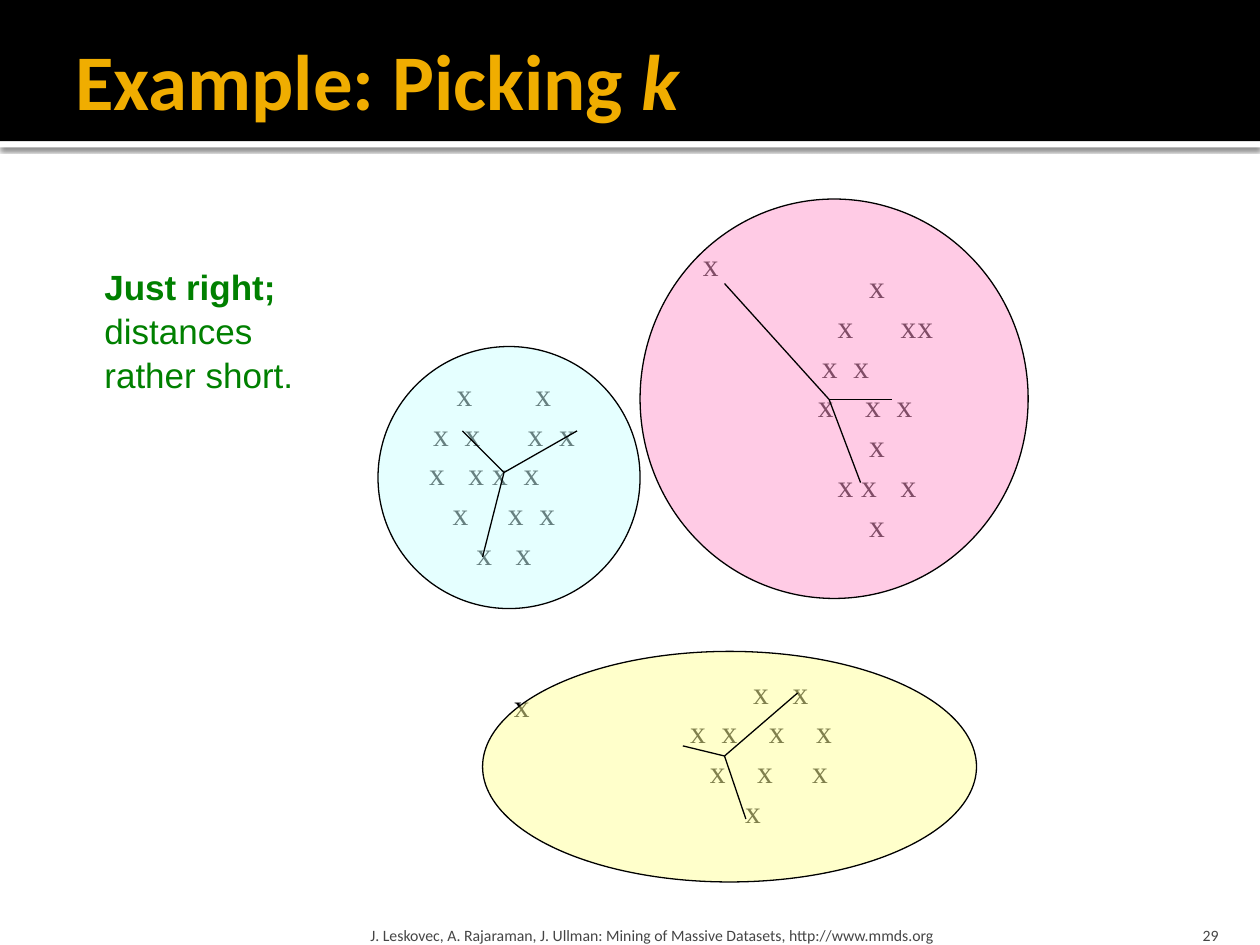
from math import sqrt

from lxml.etree import SubElement
from pptx import Presentation
from pptx.dml.color import RGBColor
from pptx.enum.shapes import MSO_CONNECTOR, MSO_SHAPE
from pptx.enum.text import MSO_ANCHOR, PP_ALIGN
from pptx.oxml.ns import qn
from pptx.util import Inches, Pt

COLORS = {
    "band": "000000", "rule": "FFFFFF", "title": "F0AD00", "footer": "454545",
    "ink": "000000", "note": "008000",
    "yellow": "FFFF99", "cyan": "CCFFFF", "pink": "FF99CC",
}
MARK_UNIT = 0.0625
MARK = {"size": 18, "font": "Times New Roman", "color": "ink", "spacing": 1.05}

CLUSTERS = [
    {"color": "yellow", "outline": (3.83, 5.17, 3.92, 1.83), "marks": (5, 5.08, 2.08, 1.75),
     "rows": [(-1, 4), (-9, -5, 1, 7), (-6.5, -0.5, 6.5), (-2,)],
     "outlier": (3.98, 5.38, 0.37, 0.5),
     "center": (5.75, 6), "ends": [(5.42, 5.92), (6.33, 5.5), (5.92, 6.5)]},
    {"color": "cyan", "outline": (3, 2.75, 2.08, 2.08), "marks": (3, 2.5, 2, 2.5),
     "rows": [(-6, 4), (-9, -5, 3, 7), (-9.5, -4.5, -1.5, 2.5), (-6.5, 0.5, 4.5), (-3.5, 1.5)],
     "outlier": None,
     "center": (4, 3.75), "ends": [(3.67, 3.42), (4.58, 3.42), (3.83, 4.42)]},
    {"color": "pink", "outline": (5.08, 1.58, 3.08, 3.17), "marks": (6, 1.67, 1.92, 3.08),
     "rows": [(-1,), (-5, -3, 3), (-7, -3), (-7.5, -1.5, 2.5), (-1,), (-5, -2, 3), (-1,)],
     "outlier": (5.48, 1.88, 0.37, 0.5),
     "center": (6.58, 3.17), "ends": [(5.75, 2.25), (7.08, 3.17), (6.83, 3.83)]},
]


def rgb(name):
    """Return the named colour."""
    return RGBColor.from_string(COLORS[name])


def inches(box):
    """Convert a tuple of inches to lengths."""
    return [Inches(v) for v in box]


def add_run(p, text, size=18, font="Calibri", color="ink", bold=False, italic=False,
            align=PP_ALIGN.LEFT, spacing=None):
    """Append a formatted run to a paragraph."""
    p.alignment = align
    p.line_spacing = spacing
    r = p.add_run()
    r.text = text
    r.font.size, r.font.name = Pt(size), font
    r.font.bold, r.font.italic = bold, italic
    r.font.color.rgb = rgb(color)


def set_frame(tf, anchor=MSO_ANCHOR.TOP, insets=(0.1, 0.05, 0.1, 0.05), wrap=True):
    """Set the anchor, insets and wrapping of a text frame."""
    tf.vertical_anchor, tf.word_wrap = anchor, wrap
    tf.margin_left, tf.margin_top, tf.margin_right, tf.margin_bottom = inches(insets)


def add_textbox(shapes, box, lines, anchor=MSO_ANCHOR.TOP,
                insets=(0.1, 0.05, 0.1, 0.05), wrap=True, **fmt):
    """Add a text box with one paragraph per (text, bold) line."""
    tf = shapes.add_textbox(*inches(box)).text_frame
    set_frame(tf, anchor, insets, wrap)
    for i, (text, bold) in enumerate(lines):
        p = tf.add_paragraph() if i else tf.paragraphs[0]
        add_run(p, text, bold=bold, **fmt)


def add_shape(s, kind, box, fill=None, line=None, alpha=None):
    """Add a preset shape with optional fill, outline and opacity."""
    sp = s.shapes.add_shape(kind, *inches(box))
    sp.shadow.inherit = False
    if fill:
        sp.fill.solid()
        sp.fill.fore_color.rgb = rgb(fill)
    else:
        sp.fill.background()
    if alpha:
        clr = sp._element.spPr.find(qn("a:solidFill"))[0]
        SubElement(clr, qn("a:alpha"), val=str(alpha * 1000))
    if line:
        sp.line.color.rgb, sp.line.width = rgb(line), Pt(0.75)
    else:
        sp.line.fill.background()
    return sp


def add_header(s, box):
    """Place the black band, its shadowed rule and the title."""
    x, y, w, h = box
    rule = add_shape(s, MSO_SHAPE.RECTANGLE, (x, y + h, w, 0.05), "rule")
    shadow = SubElement(rule._element.spPr.find(qn("a:effectLst")), qn("a:outerShdw"),
                        blurRad=str(Pt(2.5)), dist=str(Pt(0.8)), dir="5400000", rotWithShape="0")
    clr = SubElement(shadow, qn("a:srgbClr"), val=COLORS["band"])
    SubElement(clr, qn("a:alpha"), val="60000")
    band = add_shape(s, MSO_SHAPE.RECTANGLE, box, "band")
    for sp in (band, rule):
        s.shapes._spTree.insert(2, sp._element)
    title = s.shapes.title
    title.left, title.top, title.width, title.height = inches((x + 0.5, y + 0.17, w - 1, 0.92))
    tf = title.text_frame
    set_frame(tf, MSO_ANCHOR.MIDDLE, (0.1, 0.05, 0.05, 0.05))
    for text, italic in (("Example: Picking ", False), ("k", True)):
        add_run(tf.paragraphs[0], text, size=45, color="title", bold=True, italic=italic)


def add_marks(s, box, rows):
    """Place rows of marks at tab stops counted from the middle of the box."""
    tf = add_shape(s, MSO_SHAPE.OVAL, box).text_frame
    set_frame(tf, MSO_ANCHOR.MIDDLE, (0, 0, 0, 0))
    middle = box[2] / sqrt(2) / 2
    for i, row in enumerate(rows):
        p = tf.add_paragraph() if i else tf.paragraphs[0]
        add_run(p, "\tx" * len(row), **MARK)
        tabs = SubElement(p._p.get_or_add_pPr(), qn("a:tabLst"))
        for column in row:
            SubElement(tabs, qn("a:tab"), pos=str(Inches(middle + column * MARK_UNIT)), algn="l")


def add_spokes(s, center, ends):
    """Draw a group of lines from the centroid to sample points."""
    group = s.shapes.add_group_shape()
    for end in ends:
        c = group.shapes.add_connector(MSO_CONNECTOR.STRAIGHT, *inches(center + end))
        c.line.color.rgb, c.line.width = rgb("ink"), Pt(0.75)
        SubElement(c._element.spPr, qn("a:effectLst"))


def add_cluster(s, color, outline, marks, rows, outlier, center, ends):
    """Place one cluster: its marks, translucent outline and spokes."""
    add_marks(s, marks, rows)
    if outlier:
        add_textbox(s.shapes, outlier, [("x", False)], wrap=False, **MARK)
    add_shape(s, MSO_SHAPE.OVAL, outline, color, line="ink", alpha=50)
    add_spokes(s, center, ends)


def add_footer(s, box):
    """Place the credit line and the page number."""
    x, y, w, h = box
    fmt = {"size": 9, "color": "footer", "anchor": MSO_ANCHOR.BOTTOM}
    credit = "J. Leskovec, A. Rajaraman, J. Ullman: Mining of Massive Datasets, http://www.mmds.org"
    add_textbox(s.shapes, (x, y, 6.02, h), [(credit, False)], insets=(0.05, 0.05, 0.05, 0), **fmt)
    add_textbox(s.shapes, (x + w - 0.8, y, 0.8, h), [("29", False)],
                insets=(0.1, 0.05, 0.1, 0), align=PP_ALIGN.RIGHT, **fmt)


def main():
    """Build and save the slide."""
    prs = Presentation()
    prs.slide_width, prs.slide_height = Inches(10), Inches(7.5)
    s = prs.slides.add_slide(prs.slide_layouts[5])
    add_header(s, (0, 0, 10, 1.12))
    add_footer(s, (2.89, 7.2, 6.88, 0.3))
    for cluster in CLUSTERS:
        add_cluster(s, **cluster)
    note = [("Just right;", True), ("distances", False), ("rather short.", False)]
    add_textbox(s.shapes, (0.73, 2.04, 1.71, 1.11), note, wrap=False,
                size=20, font="Arial", color="note", spacing=1.05)
    prs.save("out.pptx")


if __name__ == "__main__":
    main()
